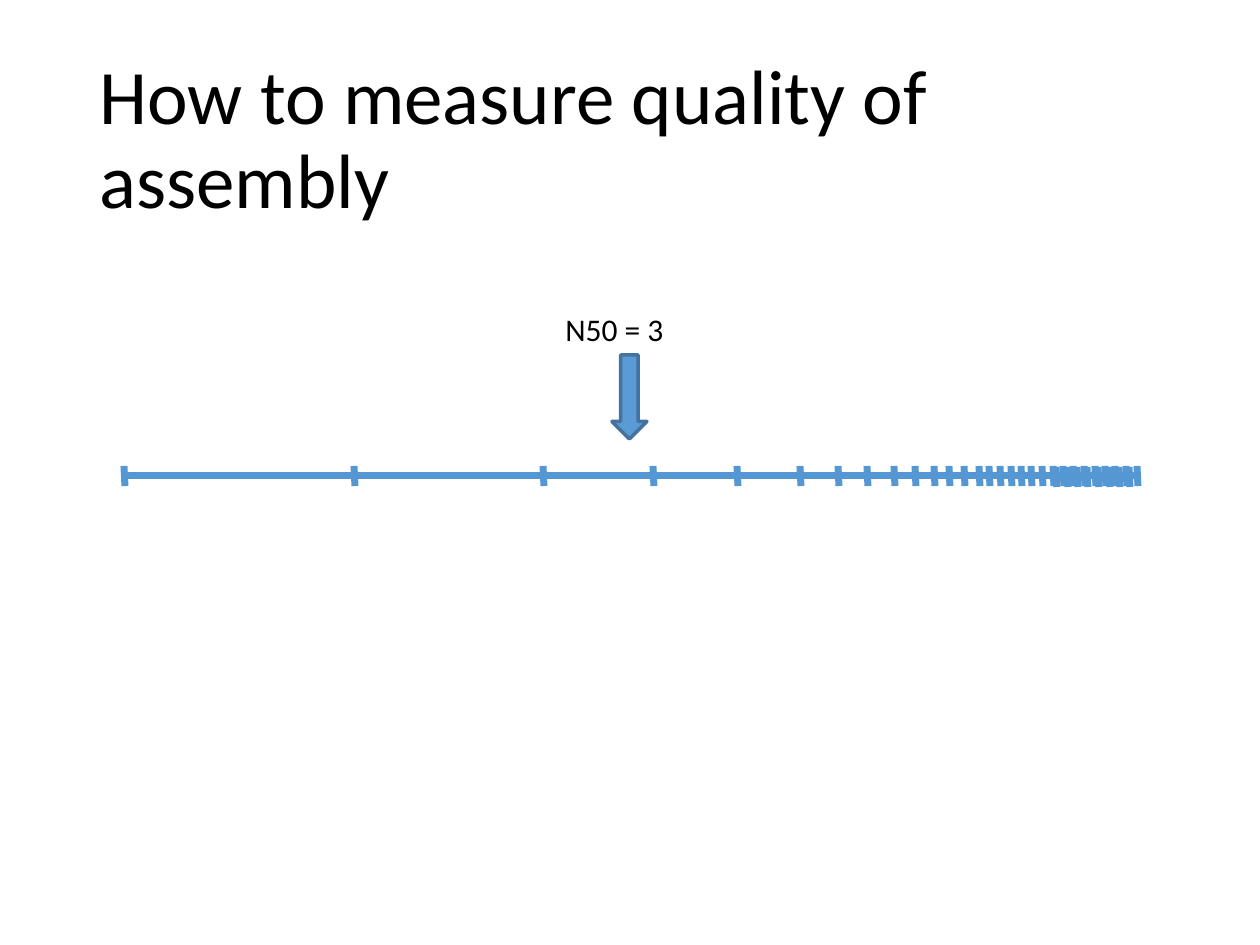
from pptx import Presentation
from pptx.dml.color import RGBColor
from pptx.enum.shapes import MSO_CONNECTOR, MSO_SHAPE
from pptx.enum.text import MSO_ANCHOR
from pptx.oxml.ns import qn
from pptx.util import Emu, Pt
from lxml import etree

STRAIGHT = MSO_CONNECTOR.STRAIGHT
DOWN_ARROW = MSO_SHAPE.DOWN_ARROW
TOP, MIDDLE = MSO_ANCHOR.TOP, MSO_ANCHOR.MIDDLE
BLACK = RGBColor(0x00, 0x00, 0x00)
AXIS_BLUE = RGBColor(0x55, 0x97, 0xD3)
ARROW_BLUE = RGBColor(0x5B, 0x9B, 0xD5)
ARROW_EDGE = RGBColor(0x43, 0x73, 0x9E)
PX_PER_INCH = 126
FONT = "Calibri"

LONG_CONTIGS = [125, 355, 544, 654, 738, 801, 839, 868, 895, 916, 935, 950, 965]
SHORT_START, SHORT_COUNT = 980, 16
OVERLAP_START, OVERLAP_COUNT = 1057, 8
SHORT_STEP = 10.5


def px(n):
    """Convert pixels to EMU."""
    return Emu(round(n * 914400 / PX_PER_INCH))


def even_ticks(start, count):
    """Return evenly spaced whole pixel positions."""
    return [round(start + i * SHORT_STEP) for i in range(count)]


class SlideBuilder:
    """Draw styled elements on the current slide."""

    def __init__(self, slide):
        self.s = slide

    def text(self, x, y, w, h, text, size, anchor=TOP, spacing=1.0):
        """Add a text box with one paragraph."""
        tf = self.s.shapes.add_textbox(px(x), px(y), px(w), px(h)).text_frame
        tf.word_wrap = True
        tf.vertical_anchor = anchor
        p = tf.paragraphs[0]
        p.line_spacing = spacing
        r = p.add_run()
        r.text = text
        r.font.name = FONT
        r.font.size = Pt(size)
        r.font.color.rgb = BLACK

    def line(self, x1, y1, x2, y2):
        """Add a thick axis line without a shadow."""
        c = self.s.shapes.add_connector(STRAIGHT, px(x1), px(y1), px(x2), px(y2))
        c.line.color.rgb = AXIS_BLUE
        c.line.width = Pt(4)
        etree.SubElement(c._element.spPr, qn("a:effectLst"))

    def ticks(self, positions, top, bottom):
        """Add slightly slanted ticks at the given positions."""
        for x in positions:
            self.line(x, bottom, x - 1, top)

    def arrow(self, x, y, w, h):
        """Add a down arrow."""
        sp = self.s.shapes.add_shape(DOWN_ARROW, px(x), px(y), px(w), px(h))
        sp.shadow.inherit = False
        sp.fill.solid()
        sp.fill.fore_color.rgb = ARROW_BLUE
        sp.line.color.rgb = ARROW_EDGE
        sp.line.width = Pt(2)


def main():
    """Build and save the slide."""
    prs = Presentation()
    prs.slide_width, prs.slide_height = px(1260), px(945)
    b = SlideBuilder(prs.slides.add_slide(prs.slide_layouts[6]))
    b.text(87, 50, 1086, 183, "How to measure quality of assembly", 44, MIDDLE, 0.9)
    b.line(121, 476, 1139, 476)
    b.ticks(LONG_CONTIGS + even_ticks(SHORT_START, SHORT_COUNT), 466, 486)
    b.ticks(even_ticks(OVERLAP_START, OVERLAP_COUNT), 467, 487)
    b.arrow(612, 355, 35, 84)
    b.text(553, 304, 155, 50, "N50 = 3", 18)
    prs.save("out.pptx")


if __name__ == "__main__":
    main()
